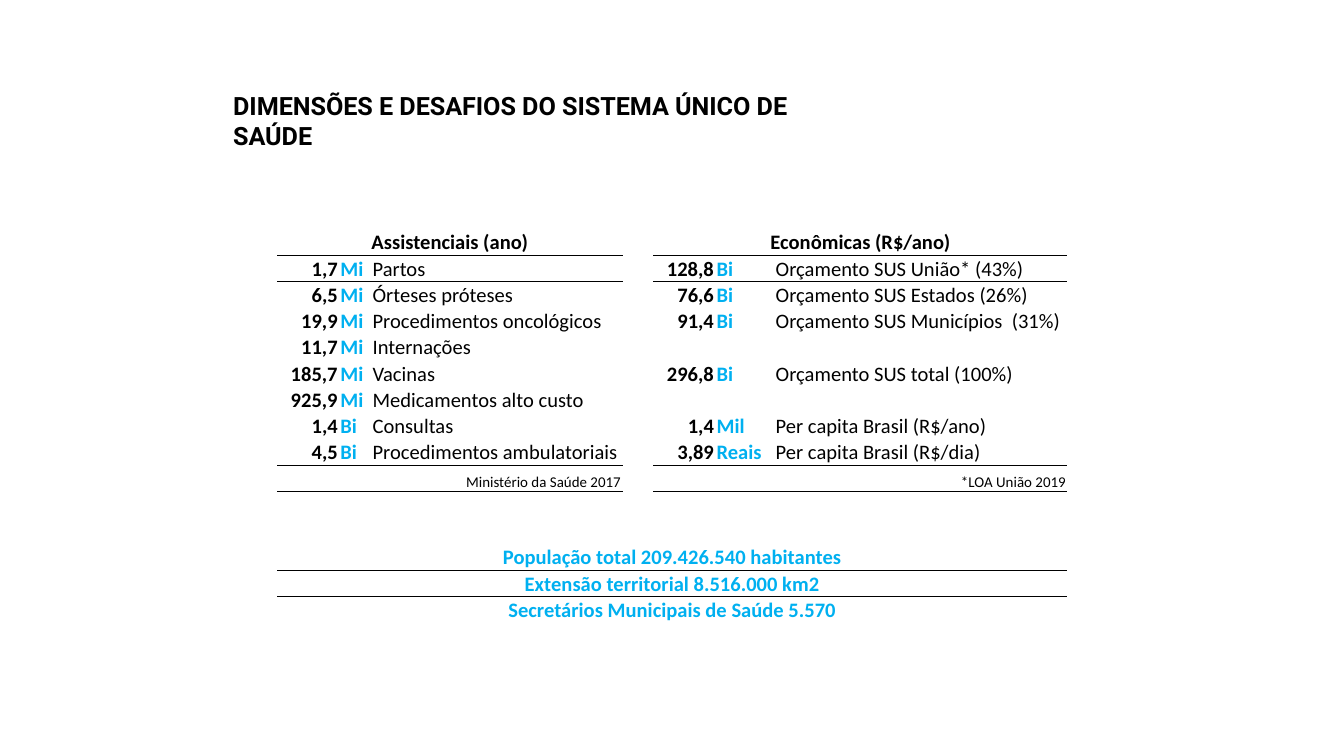
from dataclasses import dataclass

from lxml.etree import SubElement
from pptx import Presentation
from pptx.dml.color import RGBColor as Rgb
from pptx.enum.text import MSO_ANCHOR as Anchor, MSO_AUTO_SIZE as AutoSize, PP_ALIGN as Align
from pptx.oxml import parse_xml
from pptx.oxml.ns import nsdecls, qn
from pptx.util import Inches, Pt


@dataclass(frozen=True)
class Theme:
    ink: Rgb = Rgb(0, 0, 0)
    accent: Rgb = Rgb(0x00, 0xB0, 0xF0)
    heading_font: str = "Roboto"
    body_font: str = "Calibri"
    heading_size: float = 13.5
    body_size: float = 11
    source_size: float = 8
    rule_width: float = 0.5
    plain_table: str = "{2D5ABB26-0587-4C30-8999-92F81FD0307C}"


THEME = Theme()
SLIDE_WIDTH = Inches(10)
SLIDE_SIZE = SLIDE_WIDTH, SLIDE_WIDTH * 9 // 16
HEADING_PERCENT = 16.37, 11.02, 47, 5.87
TABLE_PERCENT = 20.63, 30.27, 58.8, 52.1
COLUMN_SHARES = 0.46, 0.24, 1.87, 0.23, 0.46, 0.44, 2.18
ROW_COUNT = 15
SOURCE_ROW = 9
TOTALS_ROW = 12

CARE = (
    "Assistenciais (ano)",
    [
        ("1,7", "Mi", "Partos"),
        ("6,5", "Mi", "Órteses próteses"),
        ("19,9", "Mi", "Procedimentos oncológicos"),
        ("11,7", "Mi", "Internações"),
        ("185,7", "Mi", "Vacinas"),
        ("925,9", "Mi", "Medicamentos alto custo"),
        ("1,4", "Bi", "Consultas"),
        ("4,5", "Bi", "Procedimentos ambulatoriais"),
    ],
    "Ministério da Saúde 2017",
)
BUDGET = (
    "Econômicas (R$/ano)",
    [
        ("128,8", "Bi", "Orçamento SUS União* (43%)"),
        ("76,6", "Bi", "Orçamento SUS Estados (26%)"),
        ("91,4", "Bi", "Orçamento SUS Municípios  (31%)"),
        (),
        ("296,8", "Bi", "Orçamento SUS total (100%)"),
        (),
        ("1,4", "Mil", "Per capita Brasil (R$/ano)"),
        ("3,89", "Reais", "Per capita Brasil (R$/dia)"),
    ],
    "*LOA União 2019",
)
TOTALS = [
    "População total 209.426.540 habitantes",
    "Extensão territorial 8.516.000 km2",
    "Secretários Municipais de Saúde 5.570",
]


def place(box):
    return [int(percent * length / 100) for percent, length in zip(box, SLIDE_SIZE * 2)]


def style(paragraph, font_name, size, color, bold):
    font = paragraph.font
    font.name, font.size, font.bold = font_name, Pt(size), bold
    font.color.rgb = color


def write(cell, text, align=Align.LEFT, color=THEME.ink, bold=False, size=THEME.body_size):
    cell.text = text
    paragraph = cell.text_frame.paragraphs[0]
    paragraph.alignment = align
    style(paragraph, THEME.body_font, size, color, bold)


def clear(cell):
    cell.fill.background()
    cell.vertical_anchor = Anchor.BOTTOM
    cell.margin_left = cell.margin_right = cell.margin_top = Inches(0.01)
    cell.margin_bottom = 0
    ending = SubElement(cell.text_frame.paragraphs[0]._p, qn("a:endParaRPr"))
    ending.set("sz", str(THEME.source_size * 100))


def add_edge(cell, side):
    properties = cell._tc.get_or_add_tcPr()
    edge = parse_xml(
        f'<a:{side} {nsdecls("a")} w="{Pt(THEME.rule_width)}"><a:solidFill>'
        f'<a:srgbClr val="{THEME.ink}"/></a:solidFill></a:{side}>'
    )
    properties.insert(len(properties.findall(qn("a:lnT"))), edge)


def rule_below(table, row, columns):
    for column in columns:
        add_edge(table.cell(row, column), "lnB")
        add_edge(table.cell(row + 1, column), "lnT")


def fill_panel(table, left, panel):
    title, indicators, source = panel
    columns = range(left, left + 3)
    header = table.cell(0, left)
    header.merge(table.cell(0, left + 2))
    write(header, title, Align.CENTER, bold=True)
    for row, indicator in enumerate(indicators, 1):
        if indicator:
            amount, unit, label = indicator
            write(table.cell(row, left), amount, Align.RIGHT, bold=True)
            write(table.cell(row, left + 1), unit, color=THEME.accent, bold=True)
            write(table.cell(row, left + 2), label)
    write(table.cell(SOURCE_ROW, left + 2), source, Align.RIGHT, size=THEME.source_size)
    for row in (0, SOURCE_ROW - 1):
        rule_below(table, row, columns)


def fill_totals(table, top, totals):
    last = len(COLUMN_SHARES) - 1
    for row, total in enumerate(totals, top):
        cell = table.cell(row, 0)
        cell.merge(table.cell(row, last))
        write(cell, total, Align.CENTER, THEME.accent, bold=True)
    for row in range(top, top + len(totals) - 1):
        rule_below(table, row, range(last + 1))


def add_heading(slide, box):
    frame = slide.shapes.add_textbox(*place(box)).text_frame
    frame.word_wrap = True
    frame.auto_size = AutoSize.SHAPE_TO_FIT_TEXT
    frame.text = "DIMENSÕES E DESAFIOS DO SISTEMA ÚNICO DE SAÚDE"
    style(frame.paragraphs[0], THEME.heading_font, THEME.heading_size, THEME.ink, True)


def add_indicators(slide, box):
    left, top, width, height = place(box)
    table = slide.shapes.add_table(
        ROW_COUNT, len(COLUMN_SHARES), left, top, width, height
    ).table
    table.first_row = table.horz_banding = False
    table._tbl.tblPr.find(qn("a:tableStyleId")).text = THEME.plain_table
    for column, share in zip(table.columns, COLUMN_SHARES):
        column.width = int(width * share / sum(COLUMN_SHARES))
    for row in table.rows:
        row.height = height // ROW_COUNT
    for cell in table.iter_cells():
        clear(cell)
    fill_panel(table, 0, CARE)
    fill_panel(table, 4, BUDGET)
    fill_totals(table, TOTALS_ROW, TOTALS)


def main():
    deck = Presentation()
    deck.slide_width, deck.slide_height = SLIDE_SIZE
    slide = deck.slides.add_slide(deck.slide_layouts[6])
    add_heading(slide, HEADING_PERCENT)
    add_indicators(slide, TABLE_PERCENT)
    deck.save("out.pptx")


if __name__ == "__main__":
    main()
